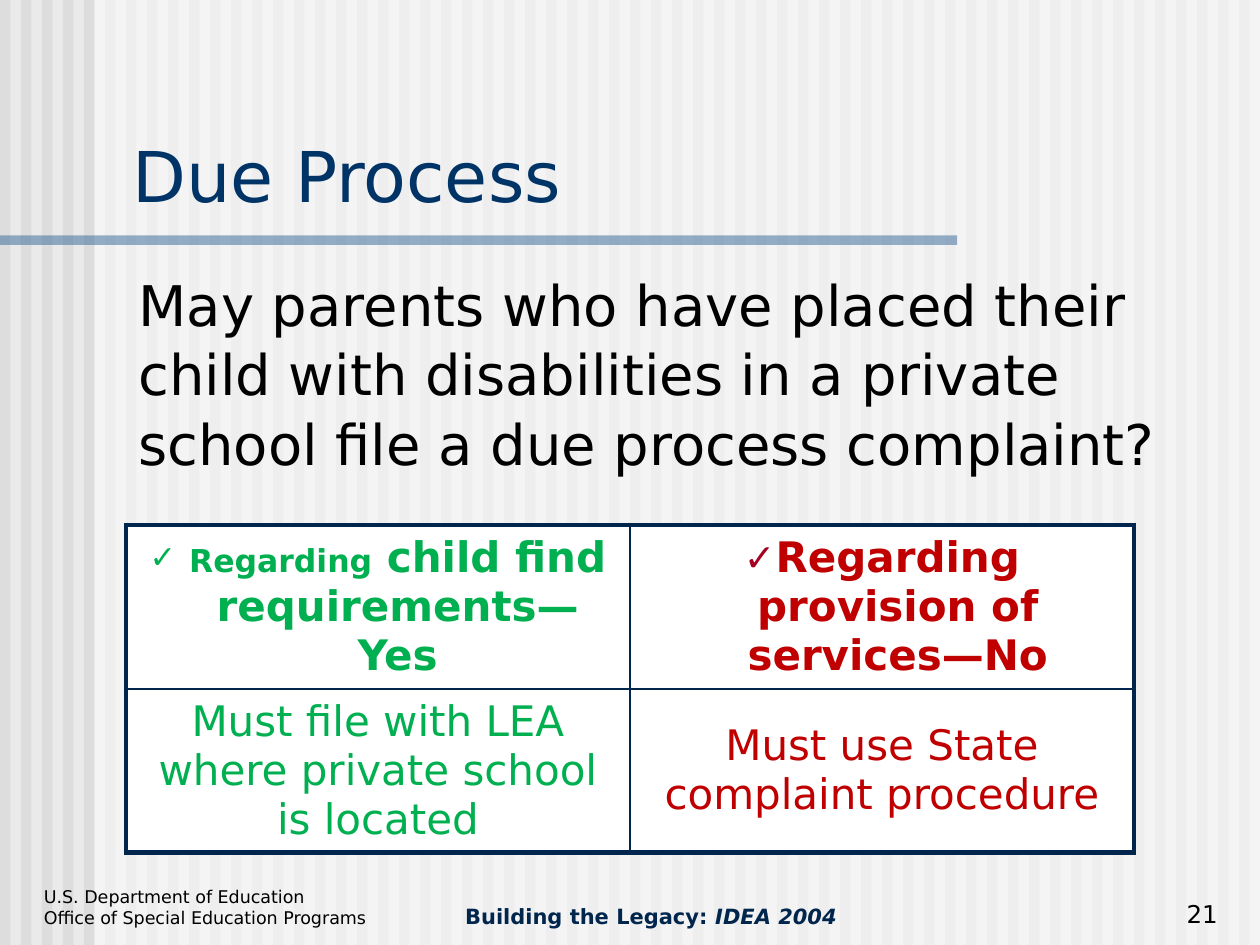
from lxml import etree
from pptx import Presentation
from pptx.dml.color import RGBColor
from pptx.enum import shapes, text
from pptx.oxml.ns import qn
from pptx.util import Pt

C = {"bg": "EAEAEA", "stripe": "DDDDDD", "white": "FFFFFF", "rule": "336699",
     "navy": "00264D", "title": "003366", "black": "000000",
     "green": "00B050", "red": "C00000", "check": "A50021"}
LEFT, CENTER, RIGHT = text.PP_ALIGN.LEFT, text.PP_ALIGN.CENTER, text.PP_ALIGN.RIGHT
TOP, BOTTOM = text.MSO_ANCHOR.TOP, text.MSO_ANCHOR.BOTTOM

prs = Presentation()
prs.slide_width, prs.slide_height = Pt(720), Pt(540)
s = prs.slides.add_slide(prs.slide_layouts[6])
s.background.fill.solid()
s.background.fill.fore_color.rgb = RGBColor.from_string(C["bg"])


def add_bar(x, y, w, h, color, alpha=None):
    sp = s.shapes.add_shape(shapes.MSO_SHAPE.RECTANGLE, Pt(x), Pt(y), Pt(w), Pt(h))
    sp.shadow.inherit = False
    sp.line.fill.background()
    sp.fill.solid()
    sp.fill.fore_color.rgb = RGBColor.from_string(C[color])
    if alpha:
        clr = sp.fill._xPr.find(qn("a:solidFill"))[0]
        etree.SubElement(clr, qn("a:alpha"), val=str(alpha * 1000))


def add_run(p, words, color, **fmt):
    r = p.add_run()
    r.text = words
    r.font.color.rgb = RGBColor.from_string(C[color])
    for name, value in {"name": "DejaVu Sans", **fmt}.items():
        setattr(r.font, name, value)


# Striped background, pale panel and title rule
for i in range(60):
    add_bar(12 * i, 0, 6, 540, "stripe")
add_bar(54, 0, 666, 540, "white", 50)
add_bar(0, 134.5, 547, 5.5, "rule", 50)

# Footer, title, question and slide number: box, anchor, alignment, paragraphs of runs
small = {"size": Pt(10)}
legacy = {"size": Pt(12), "bold": True}
question = ("May parents who have placed their child with disabilities "
            "in a private school file a due process complaint?")
boxes = [
    ((18, 498, 240, 36), BOTTOM, LEFT,
     [[("U.S. Department of Education", "black", small)],
      [("Office of Special Education Programs", "black", small)]]),
    ((228, 498, 288, 36), BOTTOM, CENTER,
     [[("Building the Legacy: ", "navy", legacy),
       ("IDEA 2004", "navy", {**legacy, "italic": True})]]),
    ((68.5, 72, 643, 55.5), BOTTOM, LEFT, [[("Due Process", "title", {"size": Pt(40)})]]),
    ((72, 150, 638.5, 330), TOP, LEFT, [[(question, "black", {"size": Pt(32)})]]),
    ((553, 498, 150, 36), BOTTOM, RIGHT, [[("21", "black", {"size": Pt(14)})]]),
]
for box, anchor, align, paragraphs in boxes:
    tf = s.shapes.add_textbox(*map(Pt, box)).text_frame
    tf.word_wrap, tf.vertical_anchor = True, anchor
    for i, runs in enumerate(paragraphs):
        p = tf.add_paragraph() if i else tf.paragraphs[0]
        p.alignment = align
        if runs[0][0] == question:
            p.space_before, p.line_spacing = Pt(12), 1.03
        for words, color, fmt in runs:
            add_run(p, words, color, **fmt)

# Answer table: runs as (words, size), then colour and bullet (indent, colour, size %)
cells = [
    [([("Regarding", 18), (" child find requirements—Yes", 24)], "green", (22.5, "green", 100)),
     ([("Regarding provision of services—No", 24)], "red", (18, "check", 90))],
    [([("Must file with LEA where private school is located", 24)], "green", None),
     ([("Must use State complaint procedure", 24)], "red", None)],
]
tbl = s.shapes.add_table(2, 2, Pt(72), Pt(300), Pt(576), Pt(144)).table
tbl.first_row = tbl.horz_banding = False
for i, row in enumerate(cells):
    for j, (runs, color, bullet) in enumerate(row):
        cell = tbl.cell(i, j)
        cell.vertical_anchor = text.MSO_ANCHOR.MIDDLE
        p = cell.text_frame.paragraphs[0]
        p.alignment = CENTER
        for words, size in runs:
            add_run(p, words, color, size=Pt(size), bold=i == 0)
        if bullet:
            indent, check, pct = bullet
            pPr = p._p.get_or_add_pPr()
            pPr.set("marL", str(Pt(indent)))
            pPr.set("indent", str(Pt(-indent)))
            clr = etree.SubElement(pPr, qn("a:buClr"))
            etree.SubElement(clr, qn("a:srgbClr"), val=C[check])
            etree.SubElement(pPr, qn("a:buSzPct"), val=str(pct * 1000))
            etree.SubElement(pPr, qn("a:buFont"), typeface="DejaVu Sans")
            etree.SubElement(pPr, qn("a:buChar"), char="✓")
        # Thick outer border, thin inner lines
        tcPr = cell._tc.get_or_add_tcPr()
        for side, outer in {"L": j == 0, "R": j == 1, "T": i == 0, "B": i == 1}.items():
            ln = etree.SubElement(tcPr, qn(f"a:ln{side}"), w=str(Pt(3 if outer else 1)))
            fill = etree.SubElement(ln, qn("a:solidFill"))
            etree.SubElement(fill, qn("a:srgbClr"), val=C["navy"])
        cell.fill.solid()
        cell.fill.fore_color.rgb = RGBColor.from_string(C["white"])

prs.save("out.pptx")
